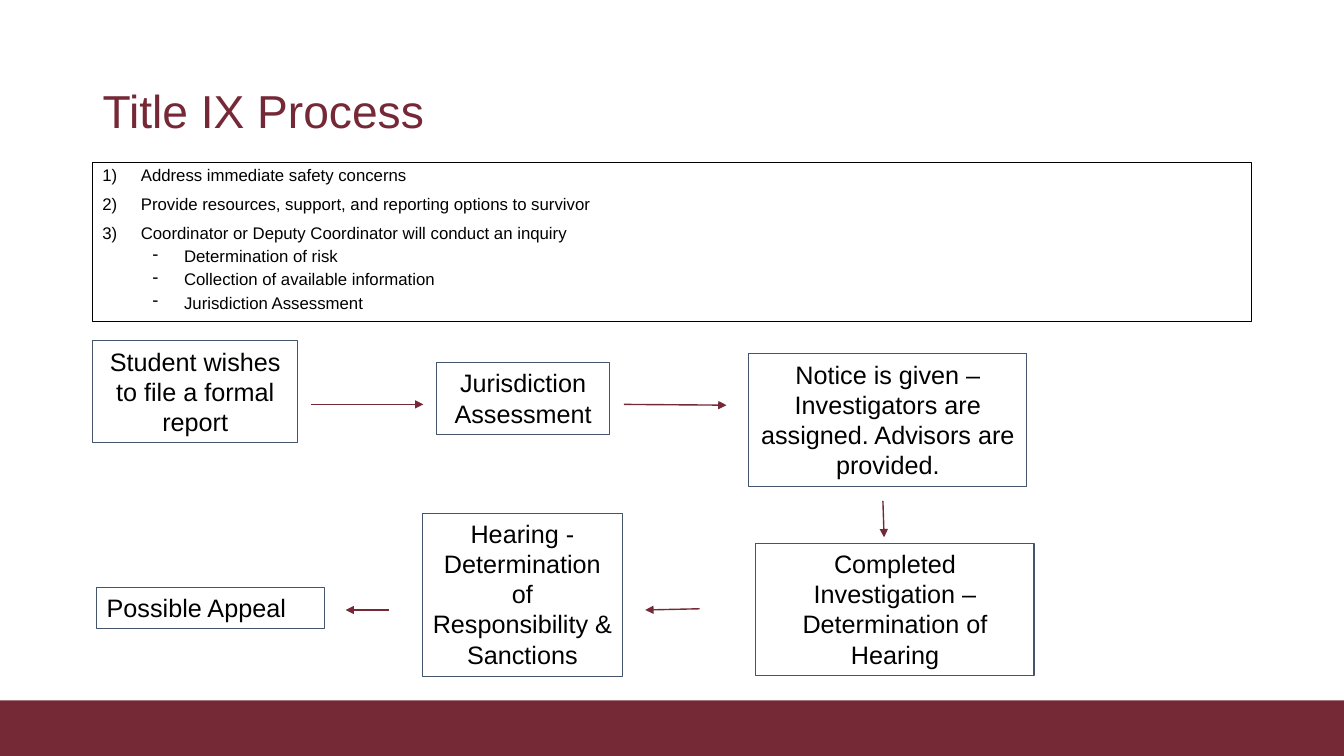
from lxml.etree import SubElement
from pptx import Presentation
from pptx.dml.color import RGBColor
from pptx.enum.shapes import MSO_CONNECTOR, MSO_SHAPE
from pptx.enum.text import MSO_ANCHOR, MSO_AUTO_SIZE, PP_ALIGN
from pptx.oxml.ns import qn
from pptx.util import Cm, Pt

MAROON, SLATE, BLACK = "752836", "44546A", "000000"

STEPS = [
    ("Address immediate safety concerns", 0),
    ("Provide resources, support, and reporting options to survivor", 0),
    ("Coordinator or Deputy Coordinator will conduct an inquiry", 0),
    ("Determination of risk", 1),
    ("Collection of available information", 1),
    ("Jurisdiction Assessment", 1),
]

STAGES = [
    ("Student wishes to file a formal report", 2.33, 8.59, 5.18, 2.57, PP_ALIGN.CENTER),
    ("Jurisdiction Assessment", 11, 9.14, 4.37, 1.8, PP_ALIGN.CENTER),
    ("Notice is given – Investigators are assigned. Advisors are provided.",
     18.87, 8.92, 7.01, 3.33, PP_ALIGN.CENTER),
    ("Completed Investigation – Determination of Hearing",
     19.05, 13.69, 7.01, 3.33, PP_ALIGN.CENTER),
    ("Hearing - Determination of Responsibility & Sanctions",
     10.64, 12.93, 5.05, 4.11, PP_ALIGN.CENTER),
    ("Possible Appeal", 2.44, 14.81, 5.74, 1.02, PP_ALIGN.LEFT),
]

ARROWS = [
    (7.85, 10.19, 10.67, 10.19),
    (15.72, 10.19, 18.31, 10.21),
    (22.25, 12.62, 22.28, 13.54),
    (17.63, 15.34, 16.26, 15.37),
    (9.8, 15.37, 8.71, 15.37),
]


def color(value):
    """Turn a hex string into a colour."""
    return RGBColor.from_string(value)


class ProcessSlide:
    """Hold the slide and its style, and draw each kind of element."""

    font = "Arial"

    def __init__(self, deck):
        """Add a title-only slide."""
        self.slide = deck.slides.add_slide(deck.slide_layouts[5])

    def style(self, paragraph, size, hue, align):
        """Format the runs and alignment of a paragraph."""
        paragraph.alignment = align
        for run in paragraph.runs:
            run.font.name = self.font
            run.font.size = Pt(size)
            run.font.color.rgb = color(hue)

    def title(self, text, left, top, width, height):
        """Place and format the title."""
        heading = self.slide.shapes.title
        heading.left, heading.top = Cm(left), Cm(top)
        heading.width, heading.height = Cm(width), Cm(height)
        frame = heading.text_frame
        frame.text = text
        frame.auto_size = MSO_AUTO_SIZE.NONE
        frame.vertical_anchor = MSO_ANCHOR.MIDDLE
        frame.paragraphs[0].line_spacing = 0.9
        self.style(frame.paragraphs[0], 33, MAROON, PP_ALIGN.LEFT)

    def box(self, left, top, width, height, outline=None, fill=None):
        """Add a rectangle and return it."""
        panel = self.slide.shapes.add_shape(
            MSO_SHAPE.RECTANGLE, Cm(left), Cm(top), Cm(width), Cm(height))
        panel.shadow.inherit = False
        if fill:
            panel.fill.solid()
            panel.fill.fore_color.rgb = color(fill)
        else:
            panel.fill.background()
        if outline:
            panel.line.color.rgb = color(outline)
            panel.line.width = Pt(0.75)
        else:
            panel.line.fill.background()
        panel.text_frame.word_wrap = True
        panel.text_frame.vertical_anchor = MSO_ANCHOR.TOP
        return panel

    def stage(self, text, left, top, width, height, align):
        """Add one stage of the process."""
        frame = self.box(left, top, width, height, SLATE).text_frame
        frame.text = text
        self.style(frame.paragraphs[0], 18, BLACK, align)

    def steps(self, entries, left, top, width, height):
        """Add the numbered steps with their dashed details."""
        frame = self.box(left, top, width, height, BLACK).text_frame
        frame.text = "\n".join(text for text, level in entries)
        for index, (paragraph, (text, level)) in enumerate(zip(frame.paragraphs, entries)):
            paragraph.level = level
            properties = paragraph._p.get_or_add_pPr()
            margin, hanging = ((0.97, 0.97), (2.06, 0.79))[level]
            properties.set("marL", str(Cm(margin)))
            properties.set("indent", str(-Cm(hanging)))
            if level:
                SubElement(properties, qn("a:buChar"), char="-")
            else:
                SubElement(properties, qn("a:buAutoNum"), type="arabicParenR")
            paragraph.line_spacing = 0.9
            if index:
                paragraph.space_before = Pt((7.5, 3.8)[level])
            self.style(paragraph, 12, BLACK, PP_ALIGN.LEFT)

    def arrow(self, x1, y1, x2, y2):
        """Add an arrow between two stages."""
        link = self.slide.shapes.add_connector(
            MSO_CONNECTOR.STRAIGHT, Cm(x1), Cm(y1), Cm(x2), Cm(y2))
        link.line.color.rgb = color(MAROON)
        link.line.width = Pt(1)
        SubElement(link.line._get_or_add_ln(), qn("a:tailEnd"), type="triangle")
        SubElement(link._element.spPr, qn("a:effectLst"))


def main():
    """Build and save the slide."""
    deck = Presentation()
    deck.slide_width, deck.slide_height = Cm(33.87), Cm(19.05)
    process = ProcessSlide(deck)
    process.box(0, 17.65, 33.87, 1.4, fill=MAROON)
    process.title("Title IX Process", 2.33, 1.02, 29.21, 3.68)
    process.steps(STEPS, 2.33, 4.09, 29.21, 4.01)
    for stage in STAGES:
        process.stage(*stage)
    for arrow in ARROWS:
        process.arrow(*arrow)
    deck.save("out.pptx")


if __name__ == "__main__":
    main()
